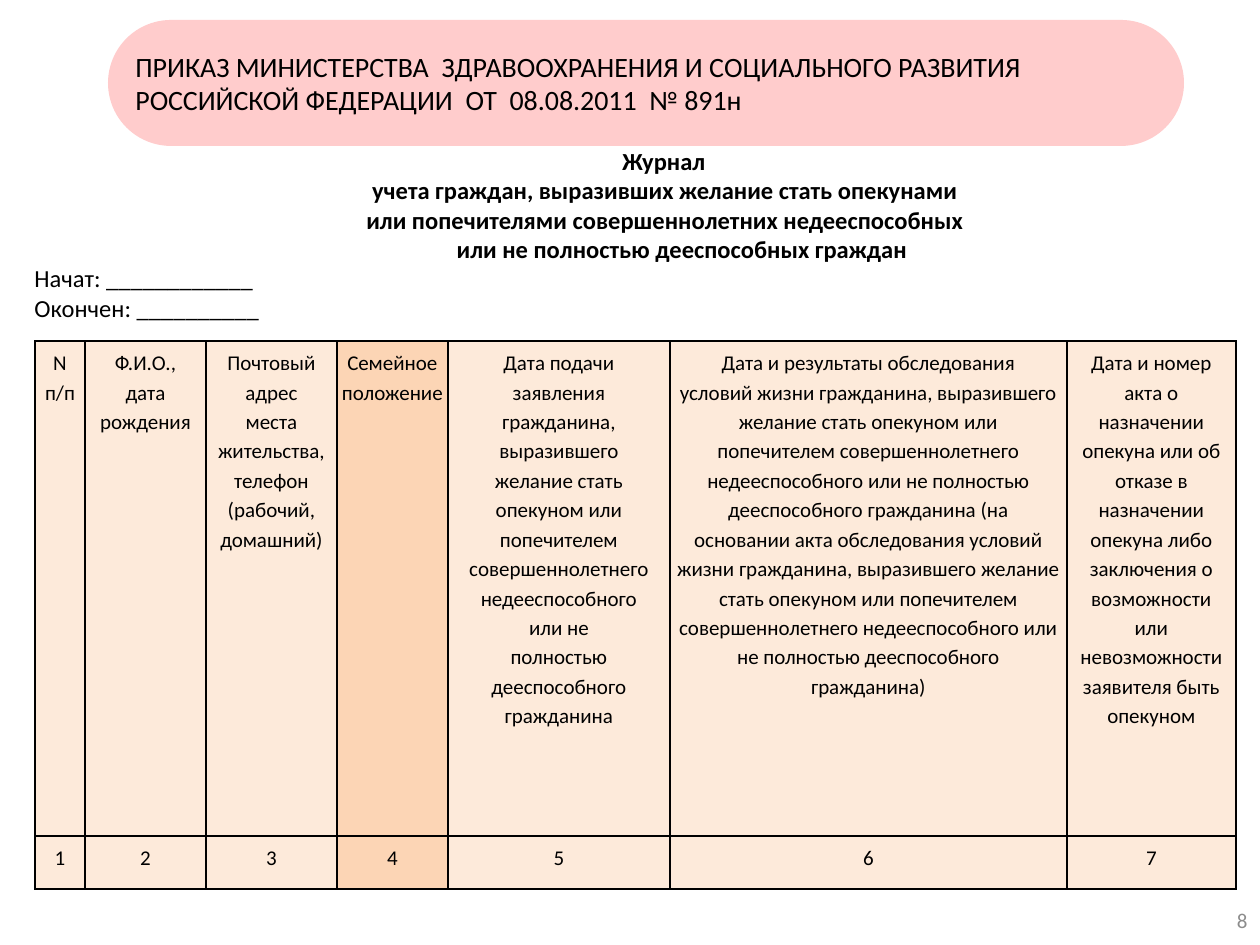
from lxml.etree import SubElement
from pptx import Presentation
from pptx.dml.color import RGBColor
from pptx.enum.shapes import MSO_SHAPE
from pptx.enum.text import MSO_ANCHOR, PP_ALIGN
from pptx.oxml.ns import qn
from pptx.util import Pt

THEME = {
    "font": "Calibri",
    "text": "000000", "number": "8C8C8C",
    "banner": "FFCCCC", "cell": "FDEADA", "accent": "FCD5B5", "border": "000000",
    "banner_pt": 16, "title_pt": 14, "table_pt": 12, "number_pt": 12,
}


def px(n):
    return round(n * 914400 / 126)


def write(tf, lines, size, color="text", align=PP_ALIGN.LEFT, bold=False, spacing=None):
    for i, line in enumerate(lines):
        p = tf.paragraphs[0] if i == 0 else tf.add_paragraph()
        p.text = line
        p.alignment = align
        p.line_spacing = spacing
        p.font.name = THEME["font"]
        p.font.size = Pt(THEME[size])
        p.font.bold = bold
        p.font.color.rgb = RGBColor.from_string(THEME[color])


prs = Presentation()
prs.slide_width, prs.slide_height = px(1260), px(945)
s = prs.slides.add_slide(prs.slide_layouts[6])

# Banner
sp = s.shapes.add_shape(MSO_SHAPE.ROUNDED_RECTANGLE, px(108), px(20), px(1076), px(126))
sp.adjustments[0] = 0.5
sp.shadow.inherit = False
sp.fill.solid()
sp.fill.fore_color.rgb = RGBColor.from_string(THEME["banner"])
sp.line.fill.background()
tf = sp.text_frame
tf.word_wrap = True
tf.vertical_anchor = MSO_ANCHOR.MIDDLE
tf.margin_left = tf.margin_right = tf.margin_top = tf.margin_bottom = px(9)
write(tf, ["ПРИКАЗ МИНИСТЕРСТВА  ЗДРАВООХРАНЕНИЯ И СОЦИАЛЬНОГО РАЗВИТИЯ",
           "РОССИЙСКОЙ ФЕДЕРАЦИИ  ОТ  08.08.2011  № 891н"], "banner_pt")

# Journal table
columns = [
    (50, ["N", "п/п"]),
    (121, ["Ф.И.О.,", "дата", "рождения"]),
    (131, ["Почтовый", "адрес", "места", "жительства,", "телефон", "(рабочий,", "домашний)"]),
    (111, ["Семейное", "положение"]),
    (222, ["Дата подачи", "заявления", "гражданина,", "выразившего", "желание стать",
           "опекуном или", "попечителем", "совершеннолетнего", "недееспособного",
           "или не", "полностью", "дееспособного", "гражданина"]),
    (397, ["Дата и результаты обследования", "условий жизни гражданина, выразившего",
           "желание стать опекуном или", "попечителем совершеннолетнего",
           "недееспособного или не полностью", "дееспособного гражданина (на",
           "основании акта обследования условий", "жизни гражданина, выразившего желание",
           "стать опекуном или попечителем", "совершеннолетнего недееспособного или",
           "не полностью дееспособного", "гражданина)"]),
    (169, ["Дата и номер", "акта о", "назначении", "опекуна или об", "отказе в",
           "назначении", "опекуна либо", "заключения о", "возможности", "или",
           "невозможности", "заявителя быть", "опекуном"]),
]
width = sum(w for w, _ in columns)
table = s.shapes.add_table(2, len(columns), px(35), px(341), px(width), px(548)).table
table.first_row = table.horz_banding = False
for row, height in zip(table.rows, (495, 53)):
    row.height = px(height)
for c, (w, heading) in enumerate(columns):
    table.columns[c].width = px(w)
    for r, lines in enumerate((heading, [str(c + 1)])):
        cell = table.cell(r, c)
        cell.margin_left = cell.margin_right = px(4)
        cell.margin_top = cell.margin_bottom = px(6)
        write(cell.text_frame, lines, "table_pt", align=PP_ALIGN.CENTER, spacing=1.15)
        tcPr = cell._tc.get_or_add_tcPr()
        for side in ("a:lnL", "a:lnR", "a:lnT", "a:lnB"):
            ln = SubElement(tcPr, qn(side), w=str(Pt(1)))
            SubElement(SubElement(ln, qn("a:solidFill")), qn("a:srgbClr"), val=THEME["border"])
        cell.fill.solid()
        cell.fill.fore_color.rgb = RGBColor.from_string(THEME["accent" if c == 3 else "cell"])

# Journal title and dates
tf = s.shapes.add_textbox(0, px(139), px(1260), px(190)).text_frame
tf.word_wrap = True
tf.vertical_anchor = MSO_ANCHOR.MIDDLE
write(tf, ["Журнал",
           "учета граждан, выразивших желание стать опекунами",
           "или попечителями совершеннолетних недееспособных",
           "или не полностью дееспособных граждан",
           "Начат: ____________",
           "Окончен: __________"], "title_pt", align=PP_ALIGN.CENTER, bold=True)
for p, indent in zip(tf.paragraphs, (68, 70, 70, 104, 22, 22)):
    p._p.get_or_add_pPr().set("marL", str(px(indent)))
for p in tf.paragraphs[4:]:
    p.alignment = PP_ALIGN.JUSTIFY
    p.font.bold = False

# Slide number
tf = s.shapes.add_textbox(px(966), px(895), px(294), px(50)).text_frame
tf.word_wrap = True
tf.vertical_anchor = MSO_ANCHOR.MIDDLE
write(tf, ["8"], "number_pt", "number", PP_ALIGN.RIGHT)

prs.save("out.pptx")
